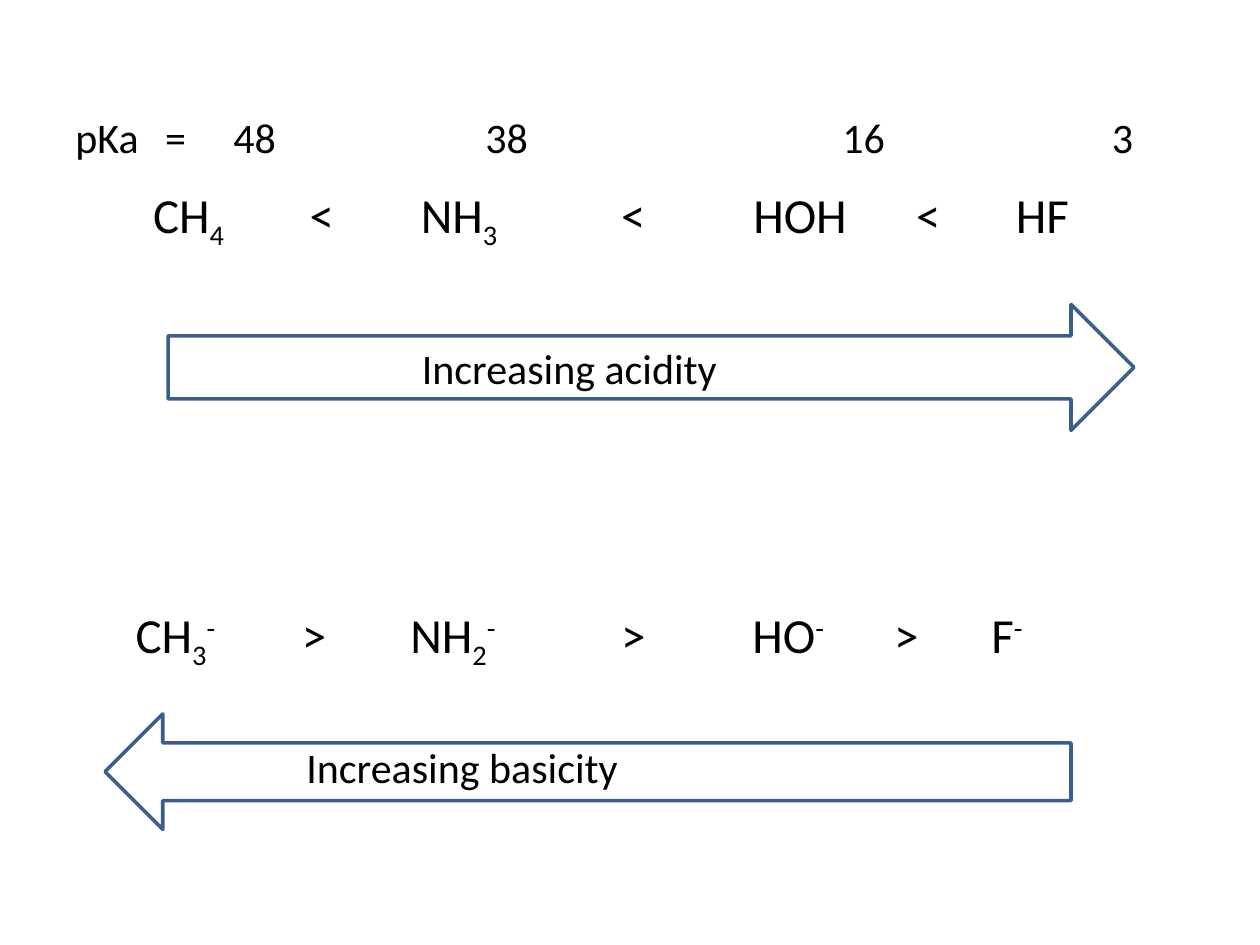
from lxml import etree
from pptx import Presentation
from pptx.dml.color import RGBColor
from pptx.enum import shapes, text
from pptx.oxml.ns import qn
from pptx.util import Pt

BLACK = RGBColor(0x00, 0x00, 0x00)
BLUE = RGBColor(0x3A, 0x5F, 0x8C)
FONT = "Calibri"
BASELINES = {"_": "-25000", "^": "30000"}

ROWS = [
    {"box": (36, 60, 630, 36), "size": 24,
     "items": [(43.2, "pKa"), (94.5, "="), (133.5, "48"), (277.5, "38"),
               (481.5, "16"), (635.5, "3")]},
    {"box": (78, 102, 612, 41), "size": 28,
     "items": [(87.5, "CH_4"), (177, "<"), (240.5, "NH_3"), (355, "<"),
               (430.5, "HOH"), (523.5, "<"), (580.5, "HF")]},
    {"box": (60, 342, 612, 41), "size": 28,
     "items": [(77.5, "CH_3^-"), (172.5, ">"), (234.5, "NH_2^-"), (355, ">"),
               (430, "HO^-"), (511, ">"), (566.5, "F^-")]},
]

TRENDS = [
    {"arrow": shapes.MSO_SHAPE.RIGHT_ARROW, "at": (96, 174, 552, 72),
     "label": "Increasing acidity", "box": (234, 192, 288, 36)},
    {"arrow": shapes.MSO_SHAPE.LEFT_ARROW, "at": (60, 408, 552, 66),
     "label": "Increasing basicity", "box": (168, 420, 288, 36)},
]


def split_runs(content):
    runs = [["", None]]
    for ch in content:
        if ch in BASELINES:
            runs.append(["", BASELINES[ch]])
        elif ch == "\t" and runs[-1][1]:
            runs.append([ch, None])
        else:
            runs[-1][0] += ch
    return runs


def add_text(s, content, box, size=24, inset=7.2, stops=()):
    tf = s.shapes.add_textbox(*map(Pt, box)).text_frame
    tf.word_wrap = True
    tf.auto_size = text.MSO_AUTO_SIZE.SHAPE_TO_FIT_TEXT
    tf.margin_left = Pt(inset)
    p = tf.paragraphs[0]
    if stops:
        tabs = etree.SubElement(p._p.get_or_add_pPr(), qn("a:tabLst"))
        for stop in stops:
            etree.SubElement(tabs, qn("a:tab"), pos=str(Pt(stop)), algn="l")
    for words, baseline in split_runs(content):
        r = p.add_run()
        r.text = words
        r.font.name = FONT
        r.font.size = Pt(size)
        r.font.color.rgb = BLACK
        if baseline:
            r.font._element.set("baseline", baseline)


def add_row(s, row):
    places, labels = zip(*row["items"])
    start = places[0]
    add_text(s, "\t".join(labels), row["box"], size=row["size"],
             inset=start - row["box"][0], stops=[x - start for x in places[1:]])


def add_trend(s, trend):
    sp = s.shapes.add_shape(trend["arrow"], *map(Pt, trend["at"]))
    sp.shadow.inherit = False
    sp.fill.background()
    sp.line.color.rgb = BLUE
    sp.line.width = Pt(2)
    add_text(s, trend["label"], trend["box"])


def main():
    prs = Presentation()
    prs.slide_width, prs.slide_height = Pt(720), Pt(540)
    s = prs.slides.add_slide(prs.slide_layouts[6])
    for row in ROWS:
        add_row(s, row)
    for trend in TRENDS:
        add_trend(s, trend)
    prs.save("out.pptx")


if __name__ == "__main__":
    main()
